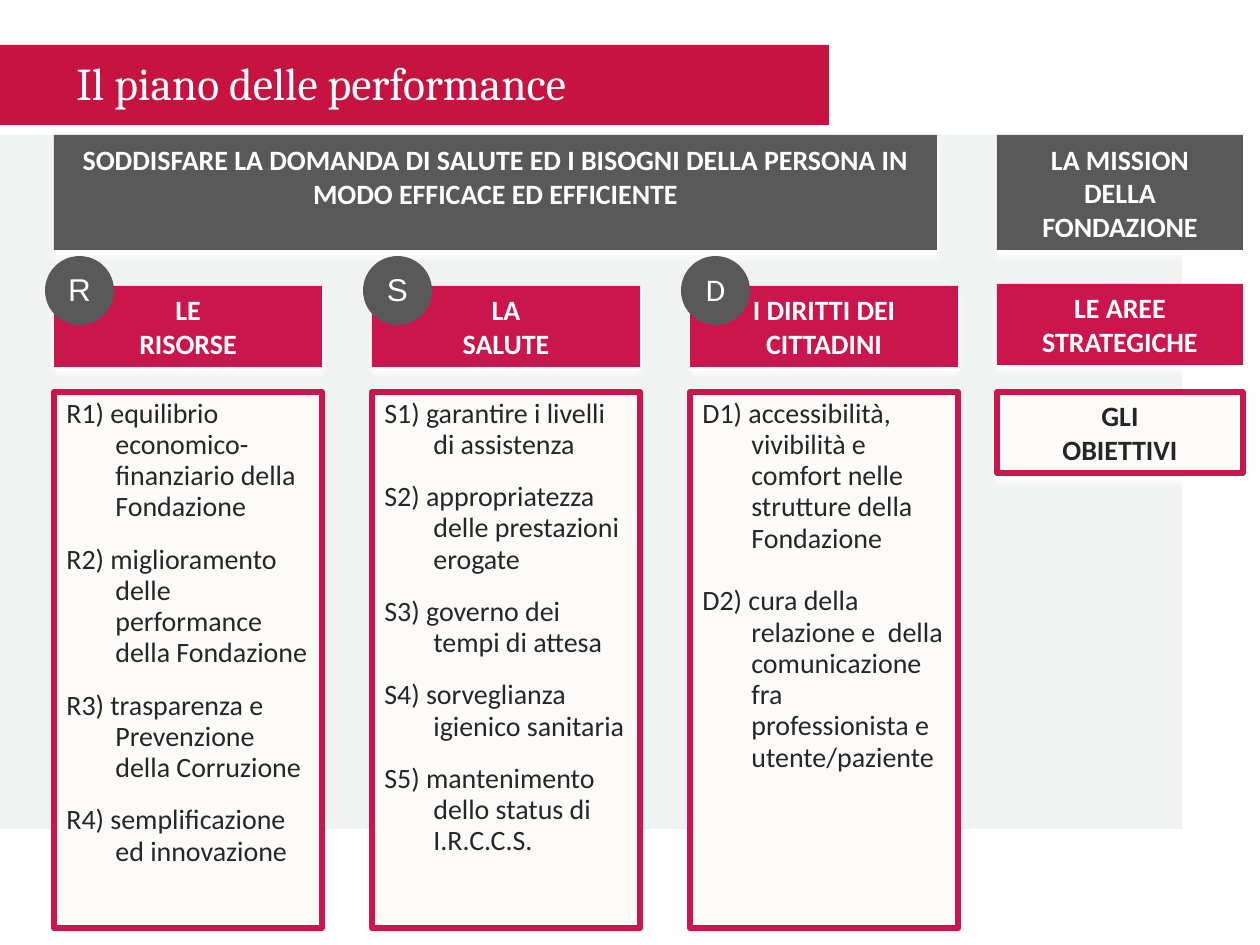
from dataclasses import dataclass

from lxml import etree
from pptx import Presentation
from pptx.dml.color import RGBColor
from pptx.enum.shapes import MSO_SHAPE
from pptx.enum.text import MSO_ANCHOR, PP_ALIGN
from pptx.oxml.ns import qn
from pptx.util import Emu, Pt

RECT, OVAL = MSO_SHAPE.RECTANGLE, MSO_SHAPE.OVAL
TOP, MIDDLE = MSO_ANCHOR.TOP, MSO_ANCHOR.MIDDLE
LEFT, CENTER = PP_ALIGN.LEFT, PP_ALIGN.CENTER


@dataclass(frozen=True)
class Theme:
    white: str = "FFFFFF"
    pale: str = "F1F2F2"
    red: str = "C6133F"
    rose: str = "CA164C"
    gray: str = "595959"
    cream: str = "FCFBF9"
    ink: str = "262626"
    head: str = "Cambria"
    body: str = "Calibri"
    mark: str = "Arial"
    title: int = 26
    text: int = 16
    badge: int = 18


T = Theme()

COLUMNS = [
    ("R", T.mark, "LE\nRISORSE", 12, [
        "R1) equilibrio economico-finanziario della Fondazione",
        "R2) miglioramento delle performance della Fondazione",
        "R3) trasparenza e Prevenzione della Corruzione",
        "R4) semplificazione ed innovazione"]),
    ("S", T.mark, "LA\nSALUTE", 12, [
        "S1) garantire i livelli di assistenza",
        "S2) appropriatezza delle prestazioni erogate",
        "S3) governo dei tempi di attesa",
        "S4) sorveglianza igienico sanitaria",
        "S5) mantenimento dello status di I.R.C.C.S."]),
    ("D", T.body, "I DIRITTI DEI CITTADINI", 18, [
        "D1) accessibilità, vivibilità e comfort nelle strutture della Fondazione",
        "D2) cura della relazione e  della comunicazione  fra professionista e  "
        "utente/paziente"]),
]


def px(n):
    return Emu(round(n * 914400 / 126))


def block(slide, box, fill, kind=RECT, edge=None, width=3.75):
    shape = slide.shapes.add_shape(kind, *map(px, box))
    shape.shadow.inherit = False
    shape.fill.solid()
    shape.fill.fore_color.rgb = RGBColor.from_string(fill)
    if edge:
        shape.line.color.rgb = RGBColor.from_string(edge)
        shape.line.width = Pt(width)
    else:
        shape.line.fill.background()
    return shape


def glow(shape):
    effects = shape._element.spPr.find(qn("a:effectLst"))
    shade = etree.SubElement(effects, qn("a:outerShdw"), blurRad=str(Pt(4)),
                             dist=str(Pt(4)), dir="5400000", rotWithShape="0")
    etree.SubElement(shade, qn("a:srgbClr"), val=T.white)


def write(shape, text, size=T.text, color=T.white, face=T.body, bold=False,
          align=CENTER, anchor=MIDDLE):
    frame = shape.text_frame
    frame.text = text
    frame.word_wrap = True
    frame.vertical_anchor = anchor
    for para in frame.paragraphs:
        para.alignment = align
        for run in para.runs:
            run.font.size = Pt(size)
            run.font.name = face
            run.font.bold = bold
            run.font.color.rgb = RGBColor.from_string(color)
    return frame


def title(slide, box, text):
    left, top, width, height = box
    block(slide, box, T.red)
    label = slide.shapes.add_textbox(px(left + 64), px(top), px(648), px(54))
    frame = write(label, text, T.title, face=T.head, align=LEFT, anchor=TOP)
    frame.margin_top = px(10)


def panel(slide, box, text, fill, color=T.white, edge=None, anchor=MIDDLE):
    shape = block(slide, box, fill, edge=edge, width=3.25)
    glow(shape)
    return write(shape, text, color=color, bold=True, anchor=anchor)


def column(slide, box, data):
    left, top, width, height = box
    letter, face, name, gap, goals = data
    panel(slide, (left, top + 30, width, 81), name, T.rose)
    card = block(slide, (left, top + 136, width, height - 136), T.cream, edge=T.rose)
    frame = write(card, "\n".join(goals), color=T.ink, align=LEFT, anchor=TOP)
    for para in frame.paragraphs:
        para.line_spacing = 0.93
        para.space_after = Pt(gap)
        props = para._p.get_or_add_pPr()
        props.set("marL", str(px(49)))
        props.set("indent", str(-px(49)))
    disc = block(slide, (left - 9, top, 69, 69), T.gray, OVAL)
    frame = write(disc, letter, T.badge, face=face)
    frame.margin_left = frame.margin_right = 0
    frame.margin_top = frame.margin_bottom = 0
    frame.paragraphs[0].line_spacing = 0.93


def legend(slide, box):
    left, top, width, height = box
    panel(slide, (left, top, width, 115), "LA MISSION\nDELLA FONDAZIONE", T.gray)
    panel(slide, (left, top + 149, width, 81), "LE AREE STRATEGICHE", T.rose)
    panel(slide, (left, top + 257, width, 81), "GLI\nOBIETTIVI", T.cream,
          T.ink, T.rose)


def main():
    deck = Presentation()
    deck.slide_width, deck.slide_height = px(1260), px(945)
    slide = deck.slides.add_slide(deck.slide_layouts[6])
    block(slide, (0, 135, 1182, 694), T.pale)
    title(slide, (0, 45, 829, 80), "Il piano delle performance")
    frame = panel(slide, (54, 135, 883, 115),
                  "SODDISFARE LA DOMANDA DI SALUTE ED I BISOGNI DELLA PERSONA IN "
                  "MODO EFFICACE ED EFFICIENTE", T.gray, anchor=TOP)
    frame.margin_top = px(8)
    for i, data in enumerate(COLUMNS):
        column(slide, (54 + 318 * i, 256, 268, 672), data)
    legend(slide, (997, 135, 246, 338))
    deck.save("out.pptx")


if __name__ == "__main__":
    main()
